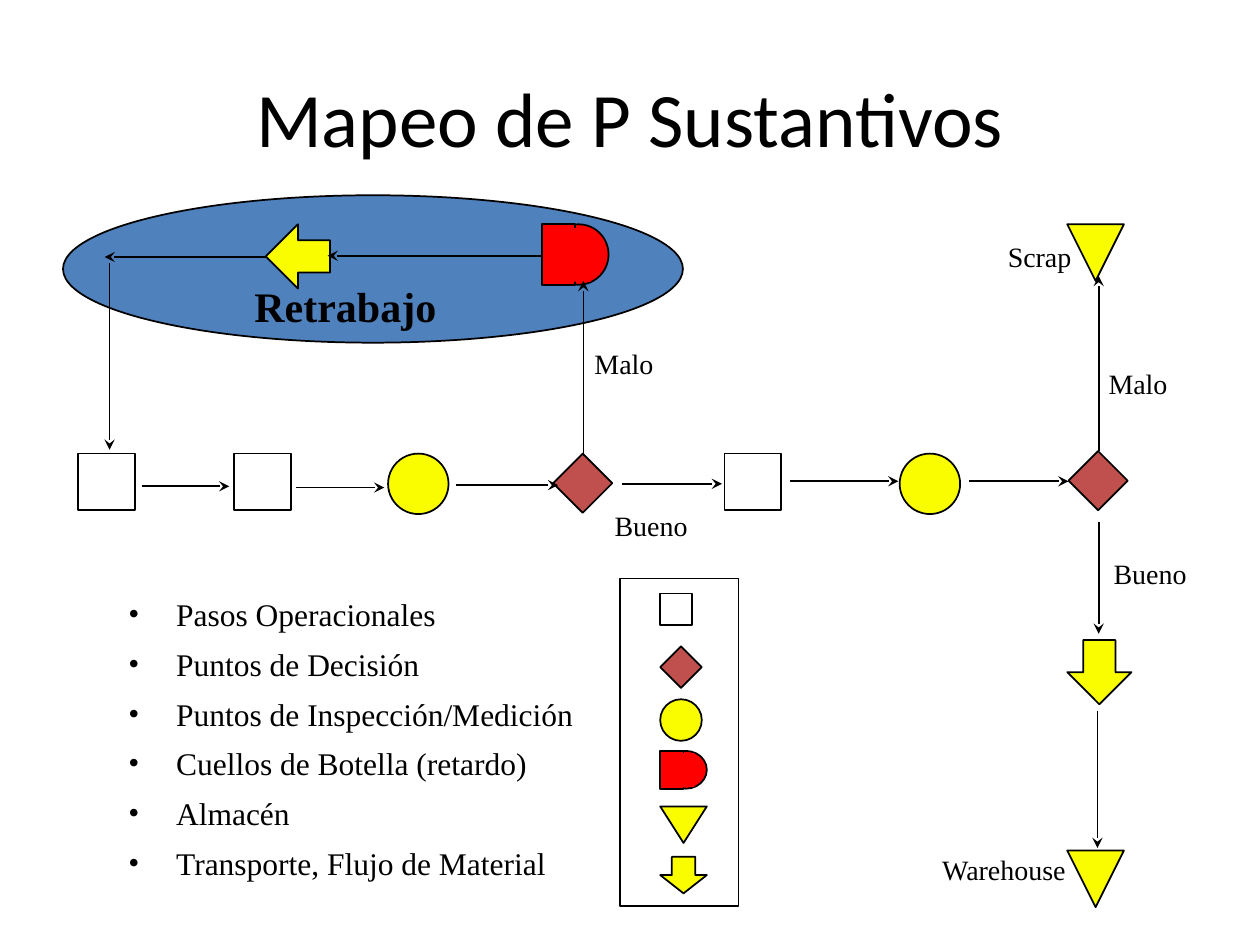
import pptx
import pptx.util
import pptx.dml.color
import pptx.enum.shapes
import pptx.enum.text
import pptx.oxml
from pptx.oxml.ns import qn
from pptx.util import Inches, Pt

KIND = pptx.enum.shapes.MSO_SHAPE
ALIGN = pptx.enum.text.PP_ALIGN
BLACK, WHITE, YELLOW, RED, BRICK, BLUE = (
    "000000", "FFFFFF", "FAFD00", "FF0000", "C0504D", "4F81BD")
SERIF = "Times New Roman"

# role: preset, fill, rotation
SYMBOLS = {
    "step": (KIND.RECTANGLE, WHITE, 0),
    "decision": (KIND.DIAMOND, BRICK, 0),
    "inspection": (KIND.OVAL, YELLOW, 0),
    "store": (KIND.ISOSCELES_TRIANGLE, YELLOW, 180),
    "transport": (KIND.DOWN_ARROW, YELLOW, 0),
    "transport back": (KIND.LEFT_ARROW, YELLOW, 0),
}
# role, left, top, size
FLOW = [
    ("step", 0.62, 3.6, 0.45),
    ("step", 1.86, 3.6, 0.45),
    ("inspection", 3.08, 3.6, 0.48),
    ("decision", 4.39, 3.6, 0.47),
    ("step", 5.75, 3.6, 0.45),
    ("inspection", 7.14, 3.6, 0.48),
    ("decision", 8.48, 3.58, 0.47),
    ("store", 8.47, 1.78, 0.45),
    ("transport", 8.47, 5.08, 0.51),
    ("transport back", 2.11, 1.78, 0.51),
    ("store", 8.47, 6.75, 0.45),
]
# x1, y1, x2, y2
ARROWS = [
    (1.13, 3.86, 1.82, 3.86), (2.35, 3.87, 3.05, 3.87),
    (3.62, 3.85, 4.43, 3.85), (4.94, 3.84, 5.73, 3.84),
    (6.27, 3.82, 7.13, 3.82), (7.69, 3.82, 8.48, 3.82),
    (4.31, 2.03, 2.6, 2.03), (2.11, 2.04, 0.83, 2.04),
    (0.87, 2.09, 0.87, 3.57), (4.63, 3.62, 4.63, 2.23),
    (8.72, 3.58, 8.72, 2.19), (8.72, 4.14, 8.72, 5.03),
    (8.71, 5.64, 8.71, 6.73),
]
# text, left, top, width
LABELS = [
    ("Bueno", 4.78, 3.99, 0.78), ("Malo", 4.62, 2.7, 0.67),
    ("Bueno", 8.74, 4.37, 0.78), ("Malo", 8.7, 2.86, 0.67),
    ("Scrap", 7.9, 1.85, 0.72), ("Warehouse", 7.38, 6.72, 1.2),
]
# text, role, top, width and height of its symbol
LEGEND = [
    ("Pasos Operacionales", "step", 4.71, 0.25, 0.25),
    ("Puntos de Decisión", "decision", 5.13, 0.33, 0.33),
    ("Puntos de Inspección/Medición", "inspection", 5.55, 0.33, 0.33),
    ("Cuellos de Botella (retardo)", "bottleneck", 5.96, 0.37, 0.3),
    ("Almacén", "store", 6.4, 0.37, 0.29),
    ("Transporte, Flujo de Material", "transport", 6.8, 0.37, 0.29),
]
LEGEND_LEFT = 5.24

deck = pptx.Presentation()
deck.slide_width, deck.slide_height = Inches(10), Inches(7.5)
slide = deck.slides.add_slide(deck.slide_layouts[6])


def color(value):
    return pptx.dml.color.RGBColor.from_string(value)


def add_shape(kind, left, top, width, height, fill, line=1):
    """Add a preset shape; fill None or line 0 leaves that part out."""
    shape = slide.shapes.add_shape(
        kind, Inches(left), Inches(top), Inches(width), Inches(height))
    shape.shadow.inherit = False
    if fill:
        shape.fill.solid()
        shape.fill.fore_color.rgb = color(fill)
    else:
        shape.fill.background()
    if line:
        shape.line.color.rgb = color(BLACK)
        shape.line.width = Pt(line)
    else:
        shape.line.fill.background()
    return shape


def add_bottleneck(left, top, width, height):
    """A D shape: disc and box, with a plain patch over their inner edges."""
    disc = width * 0.9
    add_shape(KIND.OVAL, left + width - disc, top, disc, height, RED)
    add_shape(KIND.RECTANGLE, left, top, width / 2, height, RED)
    add_shape(KIND.RECTANGLE, left + width * 0.38, top + height * 0.06,
              width * 0.36, height * 0.89, RED, line=0)


def add_symbol(role, left, top, width, height):
    if role == "bottleneck":
        add_bottleneck(left, top, width, height)
        return
    kind, fill, rotation = SYMBOLS[role]
    add_shape(kind, left, top, width, height, fill).rotation = rotation


def add_arrow(x1, y1, x2, y2):
    arrow = slide.shapes.add_connector(
        pptx.enum.shapes.MSO_CONNECTOR.STRAIGHT,
        Inches(x1), Inches(y1), Inches(x2), Inches(y2))
    arrow.line.color.rgb = color(BLACK)
    arrow.line.width = Pt(1)
    line = arrow.line._get_or_add_ln()
    line.append(line.makeelement(qn("a:tailEnd"), {"type": "stealth"}))
    properties = arrow._element.spPr
    properties.append(properties.makeelement(qn("a:effectLst"), {}))


def add_text(lines, left, top, width, height, size, font=SERIF, bold=False, wrap=False):
    """Add a text box; one that does not wrap grows to fit its text."""
    box = slide.shapes.add_textbox(
        Inches(left), Inches(top), Inches(width), Inches(height))
    frame = box.text_frame
    frame.word_wrap = wrap
    if not wrap:
        frame.auto_size = pptx.enum.text.MSO_AUTO_SIZE.SHAPE_TO_FIT_TEXT
    frame.text = "\n".join(lines)
    for paragraph in frame.paragraphs:
        for run in paragraph.runs:
            run.font.size, run.font.name, run.font.bold = Pt(size), font, bold
            run.font.color.rgb = color(BLACK)
    return frame


def add_bullet(paragraph):
    properties = paragraph._p.get_or_add_pPr()
    properties.set("marL", str(Inches(0.38)))
    properties.set("indent", str(-Inches(0.38)))
    for tag, value in (("a:buFont", {"typeface": SERIF}), ("a:buChar", {"char": "•"})):
        properties.append(properties.makeelement(qn(tag), value))


add_shape(KIND.OVAL, 0.5, 1.55, 4.92, 1.17, BLUE)
add_text(["Retrabajo"], 1.92, 2.18, 1.65, 0.5, 24, bold=True)

title = add_text(["Mapeo de P Sustantivos"], 0.5, 0.3, 9, 1.25, 44, "Calibri", wrap=True)
title.vertical_anchor = pptx.enum.text.MSO_ANCHOR.MIDDLE
title.paragraphs[0].alignment = ALIGN.CENTER

for role, left, top, size in FLOW:
    add_symbol(role, left, top, size, size)
add_bottleneck(4.3, 1.78, 0.53, 0.48)
for ends in ARROWS:
    add_arrow(*ends)
for label, left, top, width in LABELS:
    add_text([label], left, top, width, 0.36, 16)

meanings = add_text([entry[0] for entry in LEGEND], 0.92, 4.63, 5.63, 2.3, 18, wrap=True)
for index, paragraph in enumerate(meanings.paragraphs):
    add_bullet(paragraph)
    paragraph.line_spacing = 1.15
    if index:
        paragraph.space_before = Pt(3.6)

for _, role, top, width, height in LEGEND:
    add_symbol(role, LEGEND_LEFT, top, width, height)
add_shape(KIND.RECTANGLE, 4.92, 4.59, 0.94, 2.6, None, line=0.75)

deck.save("out.pptx")
